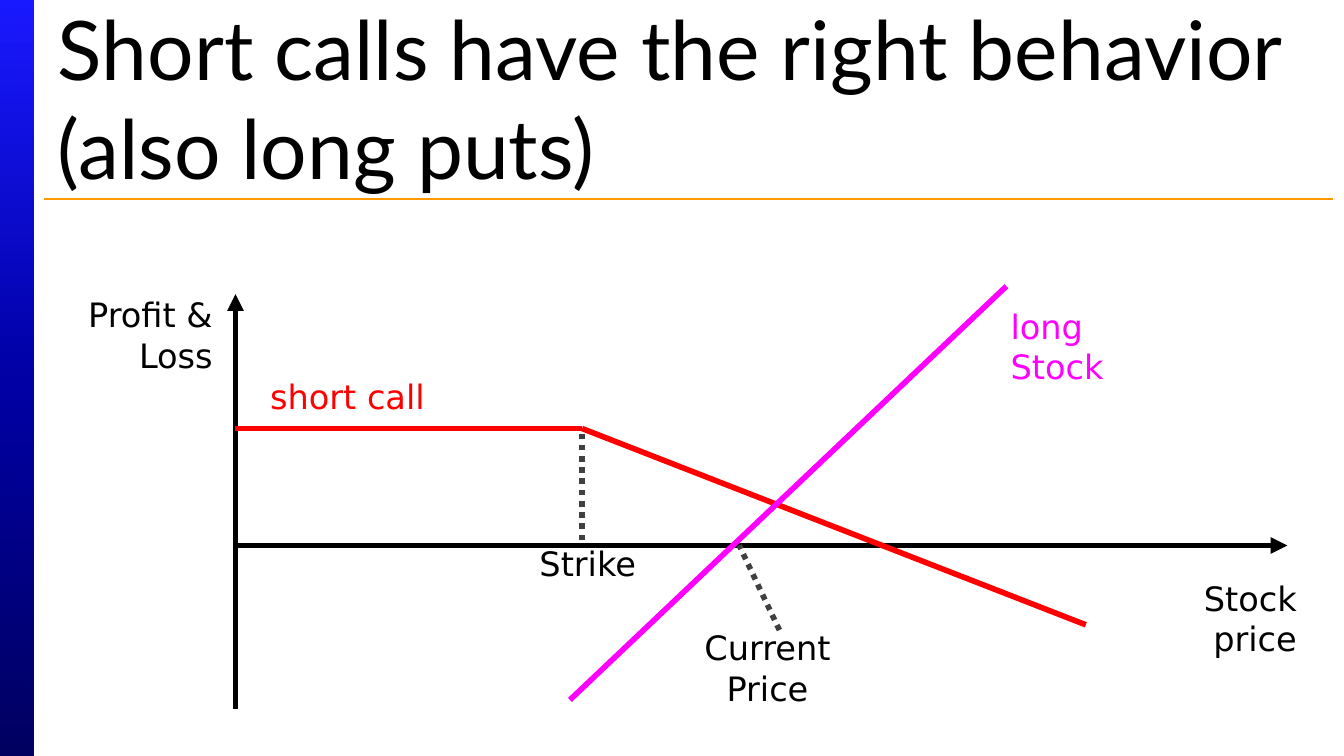
from copy import deepcopy
from dataclasses import dataclass

from lxml import etree
from pptx import Presentation
from pptx import util as u
from pptx.dml.color import RGBColor
from pptx.enum import dml, shapes, text
from pptx.oxml import ns

BLACK, RED, MAGENTA, GRAY = "000000", "FF0000", "FF00FF", "404040"
ORANGE, WHITE = "FF9900", "FFFFFF"
RAIL_STOPS = [(0, "1919FF"), (0.5, "0000A5"), (1, "000060")]
AXIS_X, AXIS_Y = 4.45, 10.31
STRIKE_X, PREMIUM_Y = 11, 8.1
LEFT, CENTER, RIGHT = text.PP_ALIGN.LEFT, text.PP_ALIGN.CENTER, text.PP_ALIGN.RIGHT


@dataclass
class Line:
    x1: float
    y1: float
    x2: float
    y2: float
    color: str = BLACK
    width: float = 3
    arrow: bool = False
    dotted: bool = False


@dataclass
class Label:
    words: str
    left: float
    top: float
    width: float
    height: float
    align: text.PP_ALIGN = RIGHT
    color: str = BLACK
    wrap: bool = True


LINES = [
    Line(0.84, 3.76, 25.2, 3.76, ORANGE, 0.75),
    Line(AXIS_X, 5.56, AXIS_X, 13.41, arrow=True),
    Line(24.33, AXIS_Y, AXIS_X, AXIS_Y, arrow=True),
    Line(20.52, 11.81, STRIKE_X, PREMIUM_Y, RED),
    Line(AXIS_X, PREMIUM_Y, STRIKE_X, PREMIUM_Y, RED),
    Line(10.77, 13.23, 19.02, 5.41, MAGENTA),
    Line(14.73, 11.91, 13.97, AXIS_Y, GRAY, dotted=True),
    Line(STRIKE_X, 10.21, STRIKE_X, PREMIUM_Y, GRAY, dotted=True),
]

LABELS = [
    Label("Stock price", 22.02, 10.8, 2.74, 1.8),
    Label("short call", 4.83, 6.99, 3.45, 1.02, color=RED, wrap=False),
    Label("long Stock", 18.85, 5.66, 3.81, 1.8, LEFT, MAGENTA),
    Label("Strike", 9.53, 10.13, 2.74, 1.02),
    Label("Current Price", 12.7, 11.73, 3.61, 1.8, CENTER),
    Label("Profit & Loss", 1.3, 5.44, 2.97, 1.45),
]


def rgb(value: str) -> RGBColor:
    return RGBColor.from_string(value)


def box(*lengths: float) -> list[u.Length]:
    return [u.Cm(length) for length in lengths]


def format_text(shape, words: str, font: str, size: float, color: str, align) -> None:
    shape.text_frame.text = words
    paragraph = shape.text_frame.paragraphs[0]
    paragraph.alignment = align
    run = paragraph.runs[0]
    run.font.name = font
    run.font.size = u.Pt(size)
    run.font.color.rgb = rgb(color)


def draw_title(slide, words: str) -> None:
    title = slide.shapes.title
    title.left, title.top, title.width, title.height = box(0.84, 0.15, 24.33, 3.38)
    title.fill.solid()
    title.fill.fore_color.rgb = rgb(WHITE)
    format_text(title, words, "Lato", 44, BLACK, LEFT)
    title.text_frame.vertical_anchor = text.MSO_ANCHOR.MIDDLE
    title.text_frame.auto_size = text.MSO_AUTO_SIZE.NONE


def draw_rail(slide, height: float) -> None:
    rail = slide.shapes.add_shape(shapes.MSO_SHAPE.RECTANGLE, *box(0, 0, 0.64, height))
    rail.shadow.inherit = False
    rail.line.fill.background()
    rail.fill.gradient()
    rail.fill.gradient_angle = 270
    stop_list = rail._element.spPr.find(".//" + ns.qn("a:gsLst"))
    stop_list.append(deepcopy(stop_list[-1]))
    for stop, (position, color) in zip(rail.fill.gradient_stops, RAIL_STOPS):
        stop.position = position
        stop.color.rgb = rgb(color)


def draw_line(slide, line: Line) -> None:
    connector = slide.shapes.add_connector(
        shapes.MSO_CONNECTOR.STRAIGHT, *box(line.x1, line.y1, line.x2, line.y2)
    )
    connector.line.color.rgb = rgb(line.color)
    connector.line.width = u.Pt(line.width)
    if line.dotted:
        connector.line.dash_style = dml.MSO_LINE.ROUND_DOT
    properties = connector._element.spPr
    if line.arrow:
        outline = properties.find(ns.qn("a:ln"))
        etree.SubElement(outline, ns.qn("a:headEnd"), type="triangle")
    etree.SubElement(properties, ns.qn("a:effectLst"))


def draw_label(slide, label: Label) -> None:
    shape = slide.shapes.add_textbox(
        *box(label.left, label.top, label.width, label.height)
    )
    shape.text_frame.word_wrap = label.wrap
    format_text(shape, label.words, "DejaVu Sans", 18, label.color, label.align)


def main() -> None:
    presentation = Presentation()
    presentation.slide_width, presentation.slide_height = box(25.4, 14.29)
    slide = presentation.slides.add_slide(presentation.slide_layouts[5])
    draw_title(slide, "Short calls have the right behavior (also long puts)")
    draw_rail(slide, 14.29)
    for line in LINES:
        draw_line(slide, line)
    for label in LABELS:
        draw_label(slide, label)
    presentation.save("out.pptx")


if __name__ == "__main__":
    main()
